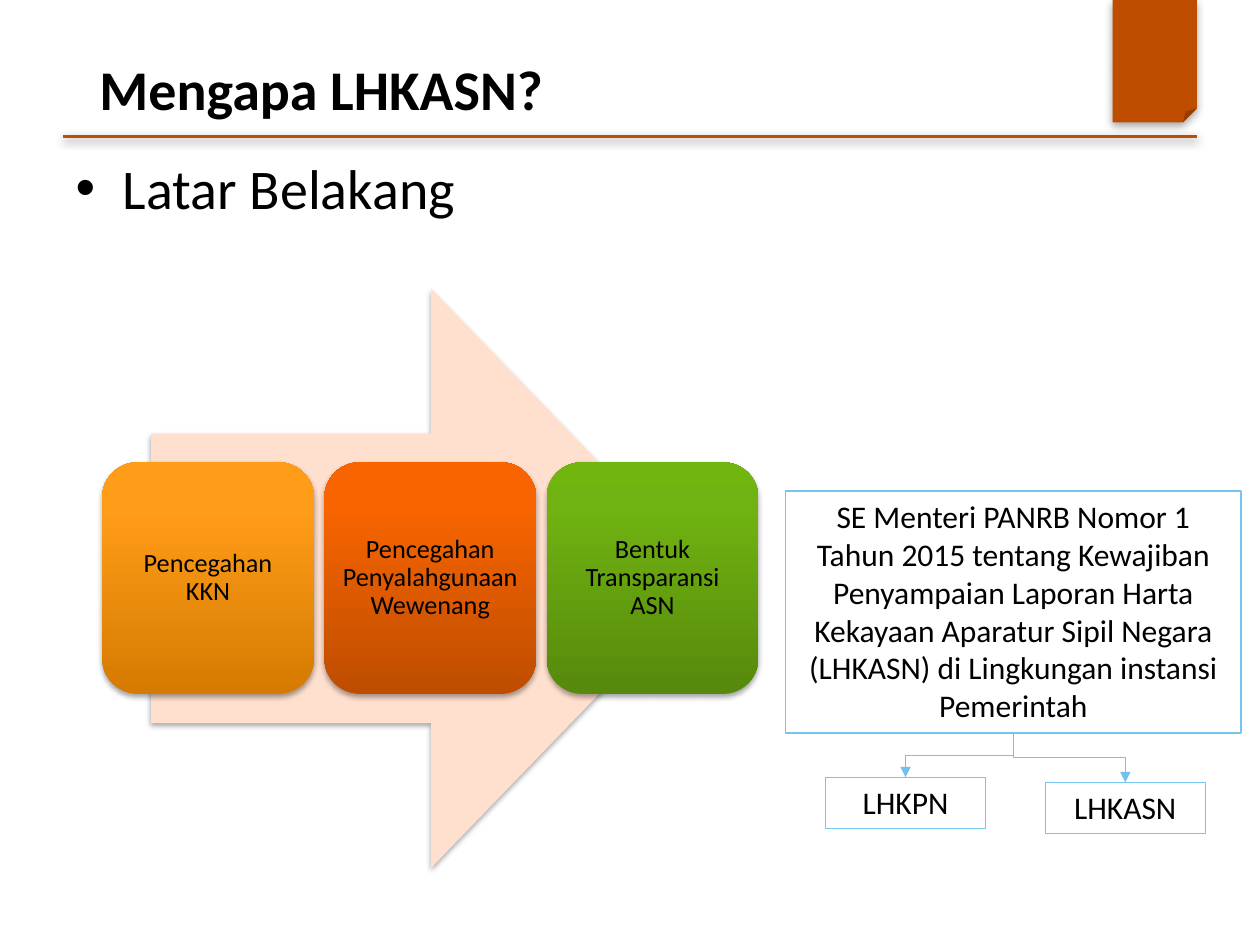
from dataclasses import dataclass

from lxml.etree import SubElement
from pptx import Presentation
from pptx.dml.color import RGBColor
from pptx.enum.shapes import MSO_CONNECTOR, MSO_SHAPE
from pptx.enum.text import MSO_ANCHOR, MSO_AUTO_SIZE, PP_ALIGN
from pptx.oxml.ns import qn
from pptx.util import Cm, Pt


@dataclass(frozen=True)
class Theme:
    font: str = "Calibri"
    ink: str = "000000"
    accent: str = "BF4D00"
    arrow: str = "FFDFCD"
    outline: str = "76C5EF"
    link: str = "70C2ED"
    orange: tuple = ("D67B01", "FF9C18", "FF9D19")
    red: tuple = ("BE4D00", "F76400", "F86400")
    green: tuple = ("56890D", "70B211", "71B60E")
    heading: int = 32
    note: int = 18
    tile: int = 15


def write(frame, text, size, bold=False, align=PP_ALIGN.LEFT, anchor=MSO_ANCHOR.TOP,
          spacing=None, inset=None):
    """Fill a text frame with one formatted paragraph."""
    frame.word_wrap = True
    frame.auto_size = MSO_AUTO_SIZE.NONE
    frame.vertical_anchor = anchor
    if inset is not None:
        frame.margin_left = frame.margin_right = inset
        frame.margin_top = frame.margin_bottom = inset
    para = frame.paragraphs[0]
    para.alignment = align
    para.space_before = Pt(0)
    if spacing:
        para.line_spacing = spacing
    span = para.add_run()
    span.text = text
    span.font.name = Theme.font
    span.font.size = Pt(size)
    span.font.bold = bold
    span.font.color.rgb = RGBColor.from_string(Theme.ink)


def add_effects(shape, blur=None, distance=1.8, alpha=35):
    """Give a downward shadow, or none at all when blur is missing."""
    effects = SubElement(shape._element.spPr, qn("a:effectLst"))
    if blur is not None:
        shadow = SubElement(effects, qn("a:outerShdw"), blurRad=str(Pt(blur)),
                            dist=str(Pt(distance)), dir="5400000", rotWithShape="0")
        color = SubElement(shadow, qn("a:srgbClr"), val=Theme.ink)
        SubElement(color, qn("a:alpha"), val=str(alpha * 1000))


class SlideBuilder:
    def __init__(self, deck, theme):
        self.theme = theme
        self.page = deck.slides.add_slide(deck.slide_layouts[1])

    def placeholder(self, index, text, area, **style):
        box = self.page.placeholders[index]
        box.left, box.top, box.width, box.height = map(Cm, area)
        write(box.text_frame, text, self.theme.heading, **style)

    def shape(self, kind, area, fill=None, line=None, blur=None):
        shape = self.page.shapes.add_shape(kind, *map(Cm, area))
        if isinstance(fill, tuple):
            self.gradient(shape, fill)
        elif fill:
            shape.fill.solid()
            shape.fill.fore_color.rgb = RGBColor.from_string(fill)
        else:
            shape.fill.background()
        if line:
            shape.line.color.rgb = RGBColor.from_string(line)
            shape.line.width = Pt(0.75)
        else:
            shape.line.fill.background()
        add_effects(shape, blur)
        return shape

    def gradient(self, shape, colors):
        shape.fill.gradient()
        fill = shape._element.spPr.find(qn("a:gradFill"))
        stops = fill.find(qn("a:gsLst"))
        for stop in list(stops):
            stops.remove(stop)
        for position, color in zip((0, 80, 100), colors):
            stop = SubElement(stops, qn("a:gs"), pos=str(position * 1000))
            SubElement(stop, qn("a:srgbClr"), val=color)
        fill.find(qn("a:lin")).set("ang", str(270 * 60000))

    def tile(self, text, area, colors):
        shape = self.shape(MSO_SHAPE.ROUNDED_RECTANGLE, area, colors, blur=3.1)
        write(shape.text_frame, text, self.theme.tile, align=PP_ALIGN.CENTER,
              anchor=MSO_ANCHOR.MIDDLE, spacing=0.9, inset=Cm(0.15))

    def note(self, text, area):
        box = self.shape(MSO_SHAPE.RECTANGLE, area, line=self.theme.outline)
        write(box.text_frame, text, self.theme.note, align=PP_ALIGN.CENTER)
        box.text_frame.auto_size = MSO_AUTO_SIZE.SHAPE_TO_FIT_TEXT
        return box

    def rule(self, left, right, height):
        line = self.page.shapes.add_connector(
            MSO_CONNECTOR.STRAIGHT, Cm(left), Cm(height), Cm(right), Cm(height))
        line.line.color.rgb = RGBColor.from_string(self.theme.accent)
        line.line.width = Pt(2)
        add_effects(line, blur=5, distance=1.6, alpha=38)

    def branch(self, parent, child):
        """Join parent bottom to child top with a vertical-first elbow arrow."""
        start_x, start_y = parent.left + parent.width // 2, parent.top + parent.height
        end_x, end_y = child.left + child.width // 2, child.top
        link = self.page.shapes.add_connector(
            MSO_CONNECTOR.ELBOW, start_x, start_y, end_x, end_y)
        link.begin_connect(parent, 2)
        link.end_connect(child, 0)
        # The elbow is stored on its side, then turned about its centre
        length, spread = end_y - start_y, abs(end_x - start_x)
        link.left = (start_x + end_x - length) // 2
        link.top = (start_y + end_y - spread) // 2
        link.width, link.height = length, spread
        to_right = end_x > start_x
        frame = link._element.spPr.find(qn("a:xfrm"))
        frame.set("rot", str((270 if to_right else 90) * 60000))
        frame.set("flipH", "1" if to_right else "0")
        link.line.color.rgb = RGBColor.from_string(self.theme.link)
        link.line.width = Pt(0.75)
        SubElement(link.line._get_or_add_ln(), qn("a:tailEnd"), type="triangle")
        add_effects(link)


def main():
    deck = Presentation()
    deck.slide_width, deck.slide_height = Cm(25.4), Cm(19.05)
    theme = Theme()
    slide = SlideBuilder(deck, theme)

    # Header
    slide.shape(MSO_SHAPE.FOLDED_CORNER, (22.43, 0, 1.7, 2.47), theme.accent, blur=5)
    slide.rule(1.27, 24.13, 2.75)
    slide.placeholder(0, "Mengapa LHKASN?", (1.75, 1.02, 21.9, 1.52),
                      bold=True, anchor=MSO_ANCHOR.MIDDLE)
    slide.placeholder(1, "Latar Belakang", (1.27, 2.97, 22.86, 16.08))

    # Reasons on the arrow
    slide.shape(MSO_SHAPE.RIGHT_ARROW, (3.05, 5.82, 11.28, 11.68), theme.arrow, blur=3.1)
    reasons = (
        ("Pencegahan KKN", theme.orange),
        ("Pencegahan Penyalahgunaan Wewenang", theme.red),
        ("Bentuk Transparansi ASN", theme.green),
    )
    for index, (text, colors) in enumerate(reasons):
        slide.tile(text, (2.06 + index * 4.48, 9.32, 4.27, 4.67), colors)

    # Regulation and the two reports
    regulation = slide.note(
        "SE Menteri PANRB Nomor 1 Tahun 2015 tentang Kewajiban Penyampaian Laporan "
        "Harta Kekayaan Aparatur Sipil Negara (LHKASN) di Lingkungan instansi Pemerintah",
        (15.84, 9.9, 9.18, 4.88))
    for text, left, top in (("LHKPN", 16.64, 15.67), ("LHKASN", 21.07, 15.77)):
        slide.branch(regulation, slide.note(text, (left, top, 3.23, 1.03)))

    deck.save("out.pptx")


if __name__ == "__main__":
    main()
